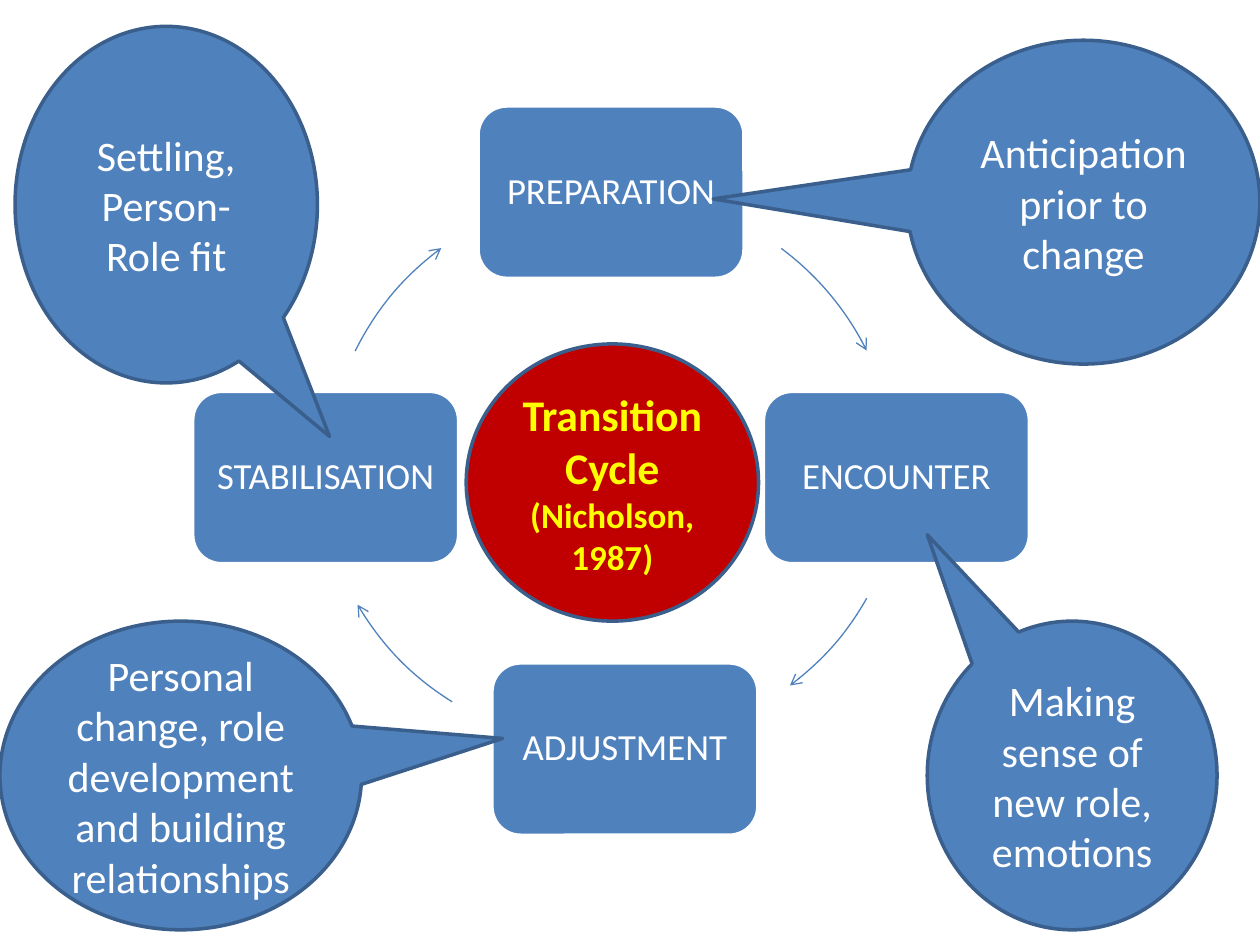
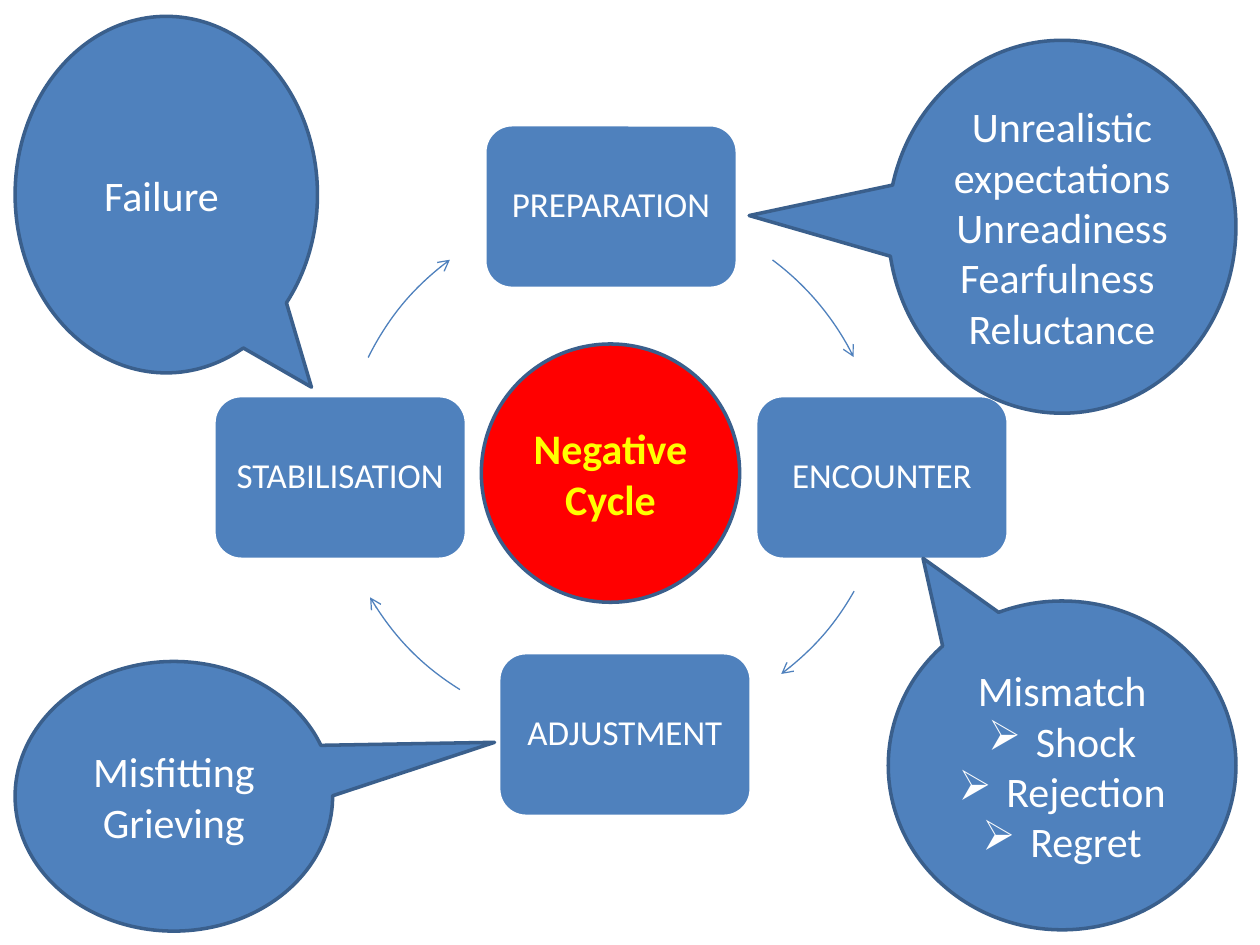
from math import cos, radians, sin

from lxml.etree import SubElement
from pptx import Presentation
from pptx.dml.color import RGBColor
from pptx.enum.shapes import MSO_SHAPE
from pptx.enum.text import MSO_ANCHOR, PP_ALIGN
from pptx.oxml.ns import qn
from pptx.util import Inches, Pt

FONT, BLUE, EDGE, WHITE, YELLOW = "Calibri", "4F81BD", "3A5F8C", "FFFFFF", "FFFF00"
CENTRE = (4.85, 3.79)
BULLET, INDENT = "➢", 0.38

# stage, angle on the ring, nudge of the box
STAGES = [
    ("PREPARATION", 270, (0, 0)),
    ("ENCOUNTER", 0, (0, 0)),
    ("ADJUSTMENT", 90, (0.11, -0.11)),
    ("STABILISATION", 180, (0, 0)),
]
# start angle, end angle, nudge of the arc
ARROWS = [
    (306.6, 333.6, (0, 0)),
    (29.6, 53.1, (0.06, -0.16)),
    (122, 149.5, (-0.06, -0.14)),
    (206.3, 233.5, (0, 0)),
]

SLIDES = [
    {
        "ring": 4.53, "stage_size": 21,
        "hub": ([("Transition Cycle", 25), ("(Nicholson, 1987)", 20)],
                (3.7, 2.73, 2.32, 2.2), "C00000"),
        "callouts": [
            (["Anticipation prior to change"], (7.2, 0.32, 2.8, 2.57), (-1.05, -0.01)),
            (["Settling, Person-Role fit"], (0.12, 0.21, 2.4, 2.83), (0.54, 0.65)),
            (["Personal change, role development and building relationships"],
             (0, 4.93, 2.87, 2.45), (0.89, -0.12)),
            (["Making sense of new role, emotions"], (7.36, 4.93, 2.3, 2.45), (-0.5, -0.78)),
        ],
    },
    {
        "ring": 4.3, "stage_size": 20,
        "hub": ([("Negative Cycle", 24)], (3.82, 2.73, 2.05, 2.05), "FF0000"),
        "callouts": [
            (["Unrealistic expectations\nUnreadiness Fearfulness ", "Reluctance"],
             (7.05, 0.32, 2.76, 2.96), (-0.9, -0.03)),
            (["Failure "], (0.12, 0.13, 2.4, 2.83), (0.48, 0.54)),
            (["Misfitting Grieving"], (0.12, 5.25, 2.52, 2.14), (1.01, -0.2)),
            (["Mismatch", BULLET + "Shock", BULLET + "Rejection", BULLET + "Regret"],
             (7.05, 4.77, 2.76, 2.61), (-0.4, -0.63)),
        ],
    },
]


def rgb(value):
    """Turn a hex string into a colour."""
    return RGBColor.from_string(value)


def add_shape(s, kind, box, fill, line, width, adjustments=()):
    """Add a flat preset shape."""
    sp = s.shapes.add_shape(kind, *(Inches(v) for v in box))
    sp.shadow.inherit = False
    if fill:
        sp.fill.solid()
        sp.fill.fore_color.rgb = rgb(fill)
    else:
        sp.fill.background()
    sp.line.color.rgb = rgb(line)
    sp.line.width = Pt(width)
    for i, value in enumerate(adjustments):
        sp.adjustments[i] = value
    return sp


def add_bullet(p):
    """Give a paragraph a hanging arrow bullet."""
    pPr = p._p.get_or_add_pPr()
    pPr.set("marL", str(Inches(INDENT)))
    pPr.set("indent", str(-Inches(INDENT)))
    SubElement(pPr, qn("a:buChar"), char=BULLET)


def write(sp, paragraphs, color=WHITE, bold=False, spacing=None):
    """Fill a shape with centred (text, size) paragraphs."""
    tf = sp.text_frame
    tf.word_wrap = True
    tf.vertical_anchor = MSO_ANCHOR.MIDDLE
    for i, (text, size) in enumerate(paragraphs):
        p = tf.add_paragraph() if i else tf.paragraphs[0]
        p.alignment = PP_ALIGN.CENTER
        if spacing:
            p.line_spacing = spacing
        if text.startswith(BULLET):
            add_bullet(p)
        for j, part in enumerate(text.removeprefix(BULLET).split("\n")):
            if j:
                p.add_line_break()
            r = p.add_run()
            r.text = part
            r.font.name, r.font.size, r.font.bold = FONT, Pt(size), bold
            r.font.color.rgb = rgb(color)


def add_ring(s, ring, size):
    """Place the stages on the ring and the curved arrows between them."""
    width, height = 0.466 * ring, 0.302 * ring
    for name, angle, (dx, dy) in STAGES:
        x = CENTRE[0] + ring / 2 * cos(radians(angle)) + dx
        y = CENTRE[1] + ring / 2 * sin(radians(angle)) + dy
        box = (x - width / 2, y - height / 2, width, height)
        sp = add_shape(s, MSO_SHAPE.ROUNDED_RECTANGLE, box, BLUE, WHITE, 2)
        write(sp, [(name, size)], spacing=0.9)
    for start, end, (dx, dy) in ARROWS:
        box = (CENTRE[0] - ring / 2 + dx, CENTRE[1] - ring / 2 + dy, ring, ring)
        sp = add_shape(s, MSO_SHAPE.ARC, box, None, BLUE, 0.75, (start * 0.6, end * 0.6))
        SubElement(sp.line._get_or_add_ln(), qn("a:tailEnd"), type="arrow")


def main():
    """Build the two cycle slides."""
    prs = Presentation()
    prs.slide_width, prs.slide_height = Inches(10), Inches(7.5)
    for content in SLIDES:
        s = prs.slides.add_slide(prs.slide_layouts[6])
        add_ring(s, content["ring"], content["stage_size"])
        paragraphs, box, fill = content["hub"]
        write(add_shape(s, MSO_SHAPE.OVAL, box, fill, EDGE, 2), paragraphs, YELLOW, True)
        for texts, box, pointer in content["callouts"]:
            sp = add_shape(s, MSO_SHAPE.OVAL_CALLOUT, box, BLUE, EDGE, 2, pointer)
            write(sp, [(text, 24) for text in texts])
    prs.save("out.pptx")


if __name__ == "__main__":
    main()
